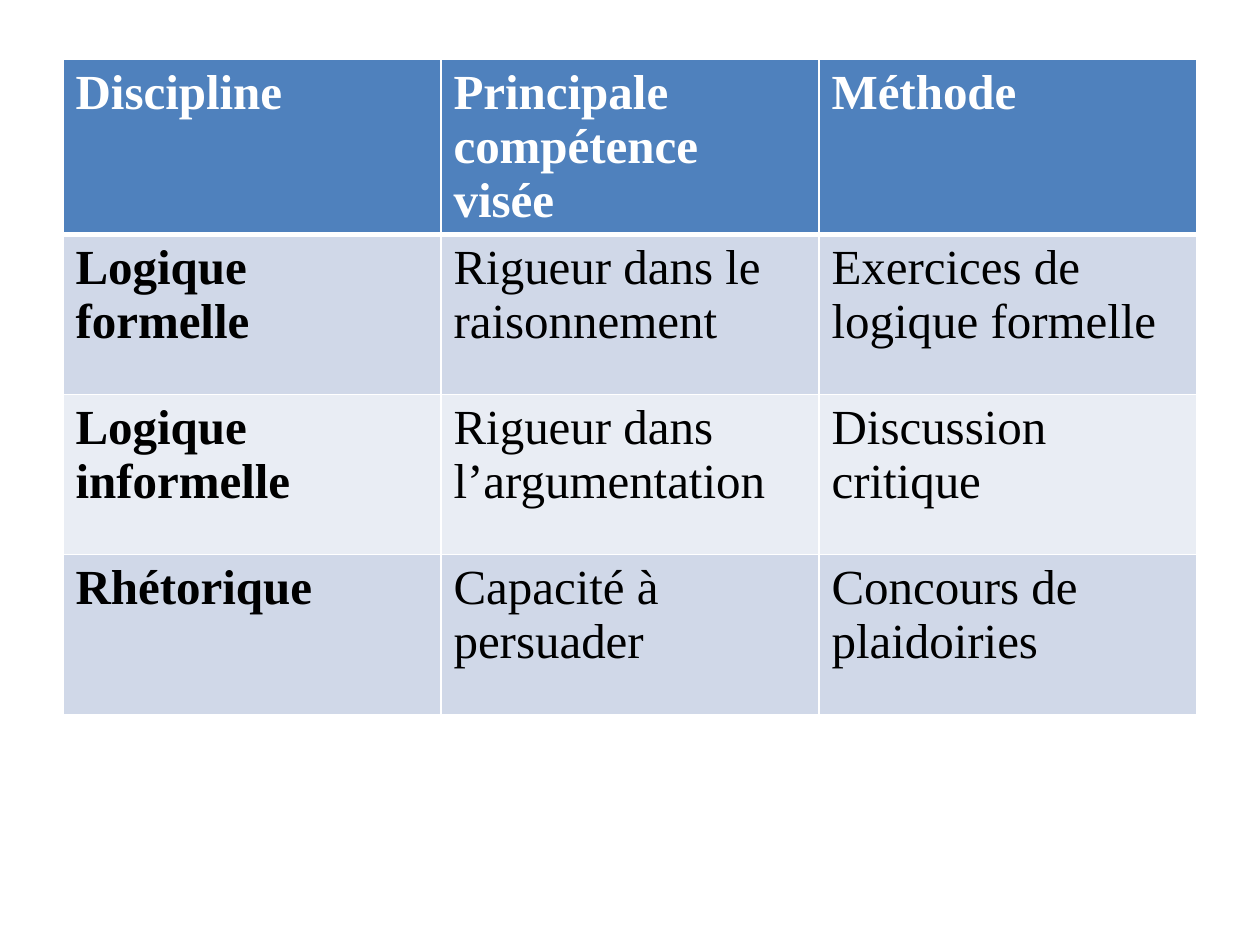
import pptx
import pptx.dml.color
import pptx.oxml.ns
import pptx.util
from dataclasses import dataclass
from lxml import etree
from pptx.util import Inches


@dataclass
class Theme:
    font: str = "Times New Roman"
    size: int = 28
    head: str = "4F81BD"
    odd: str = "D0D8E8"
    even: str = "E9EDF4"
    white: str = "FFFFFF"
    black: str = "000000"
    thin: int = 1
    thick: int = 3


theme = Theme()
color = pptx.dml.color.RGBColor.from_string
qn = pptx.oxml.ns.qn


def border(cell, side, width):
    """Draw one side (L, R, T or B) of a cell, width in points."""
    props = cell._tc.get_or_add_tcPr()
    line = etree.SubElement(props, qn(f"a:ln{side}"), w=str(pptx.util.Pt(width)))
    fill = etree.SubElement(line, qn("a:solidFill"))
    etree.SubElement(fill, qn("a:srgbClr"), val=theme.white)


rows = [
    ("Discipline", "Principale compétence visée", "Méthode"),
    ("Logique formelle", "Rigueur dans le raisonnement", "Exercices de logique formelle"),
    ("Logique informelle", "Rigueur dans l’argumentation", "Discussion critique"),
    ("Rhétorique", "Capacité à persuader", "Concours de plaidoiries"),
]
heights = [1.39] + [1.27] * 3

deck = pptx.Presentation()
deck.slide_width, deck.slide_height = Inches(10), Inches(7.5)
slide = deck.slides.add_slide(deck.slide_layouts[6])

table = slide.shapes.add_table(
    len(rows), 3, Inches(0.5), Inches(0.47), Inches(9), Inches(sum(heights))
).table

for r, texts in enumerate(rows):
    table.rows[r].height = Inches(heights[r])
    fill = theme.head if r == 0 else theme.odd if r % 2 else theme.even
    for c, text in enumerate(texts):
        cell = table.cell(r, c)
        border(cell, "L", theme.thin)
        border(cell, "R", theme.thin)
        border(cell, "T", theme.thick if r == 1 else theme.thin)
        border(cell, "B", theme.thick if r == 0 else theme.thin)
        cell.fill.solid()
        cell.fill.fore_color.rgb = color(fill)
        cell.text_frame.text = text
        font = cell.text_frame.paragraphs[0].runs[0].font
        font.name = theme.font
        font.size = pptx.util.Pt(theme.size)
        font.bold = r == 0 or c == 0
        font.color.rgb = color(theme.white if r == 0 else theme.black)

deck.save("out.pptx")
